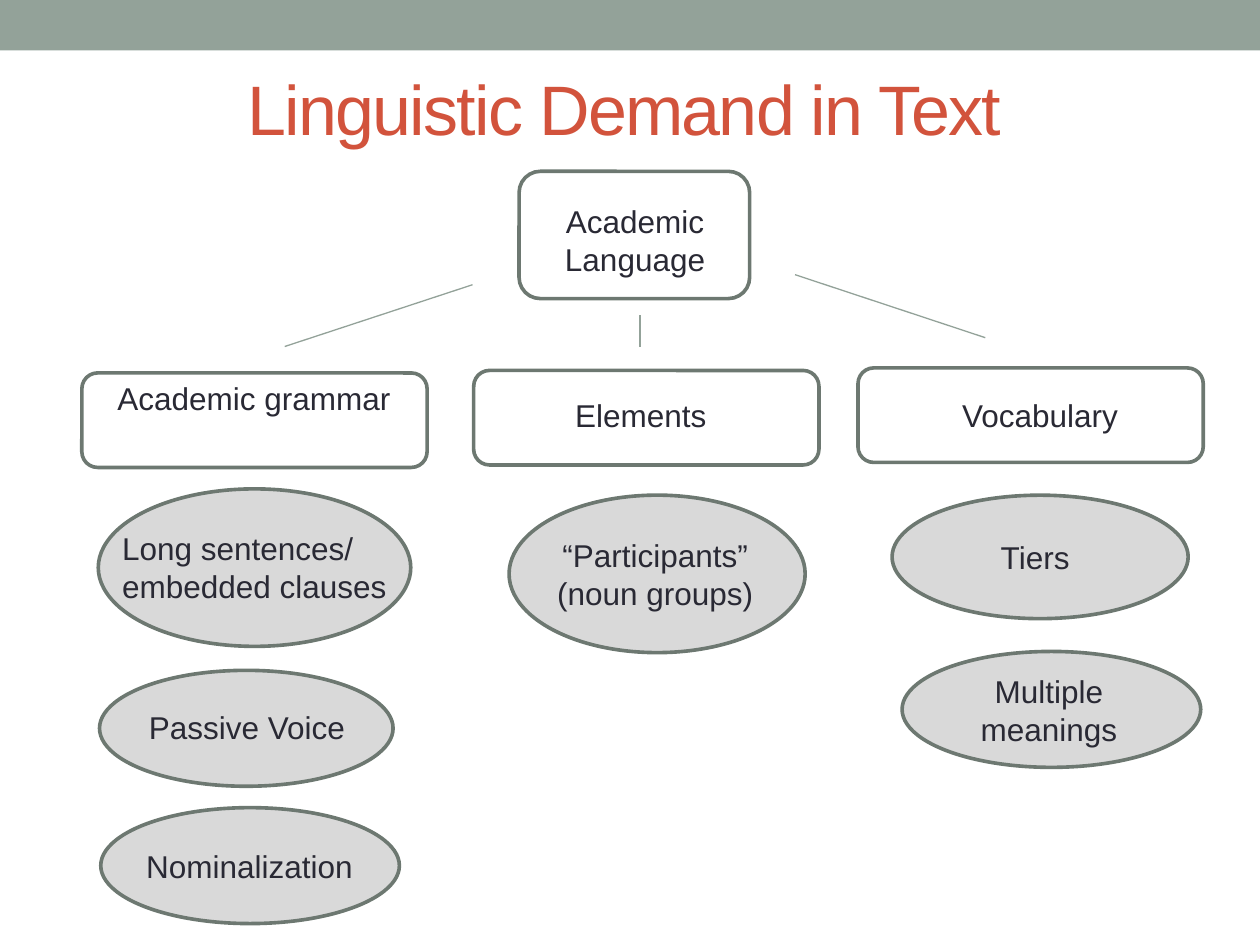
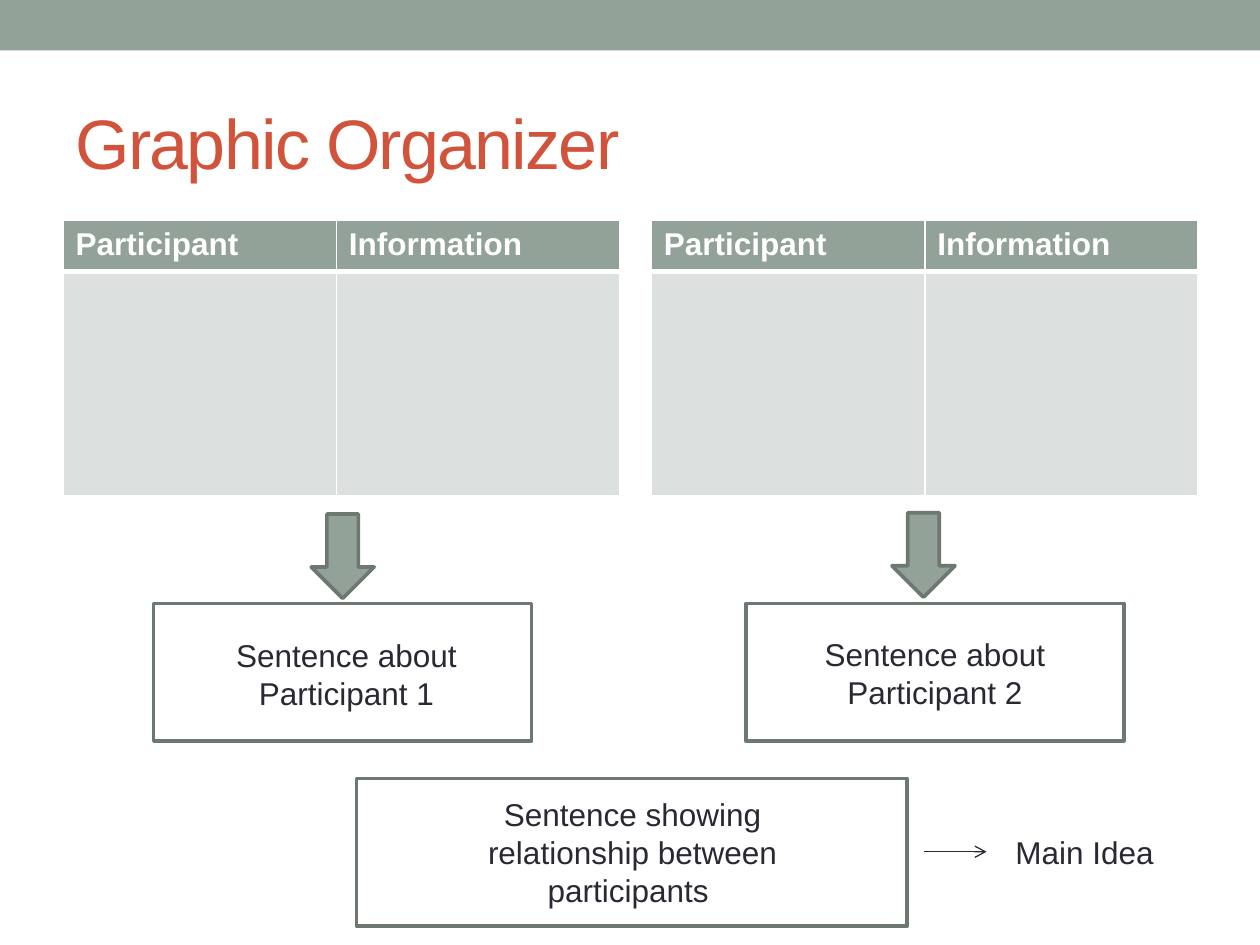
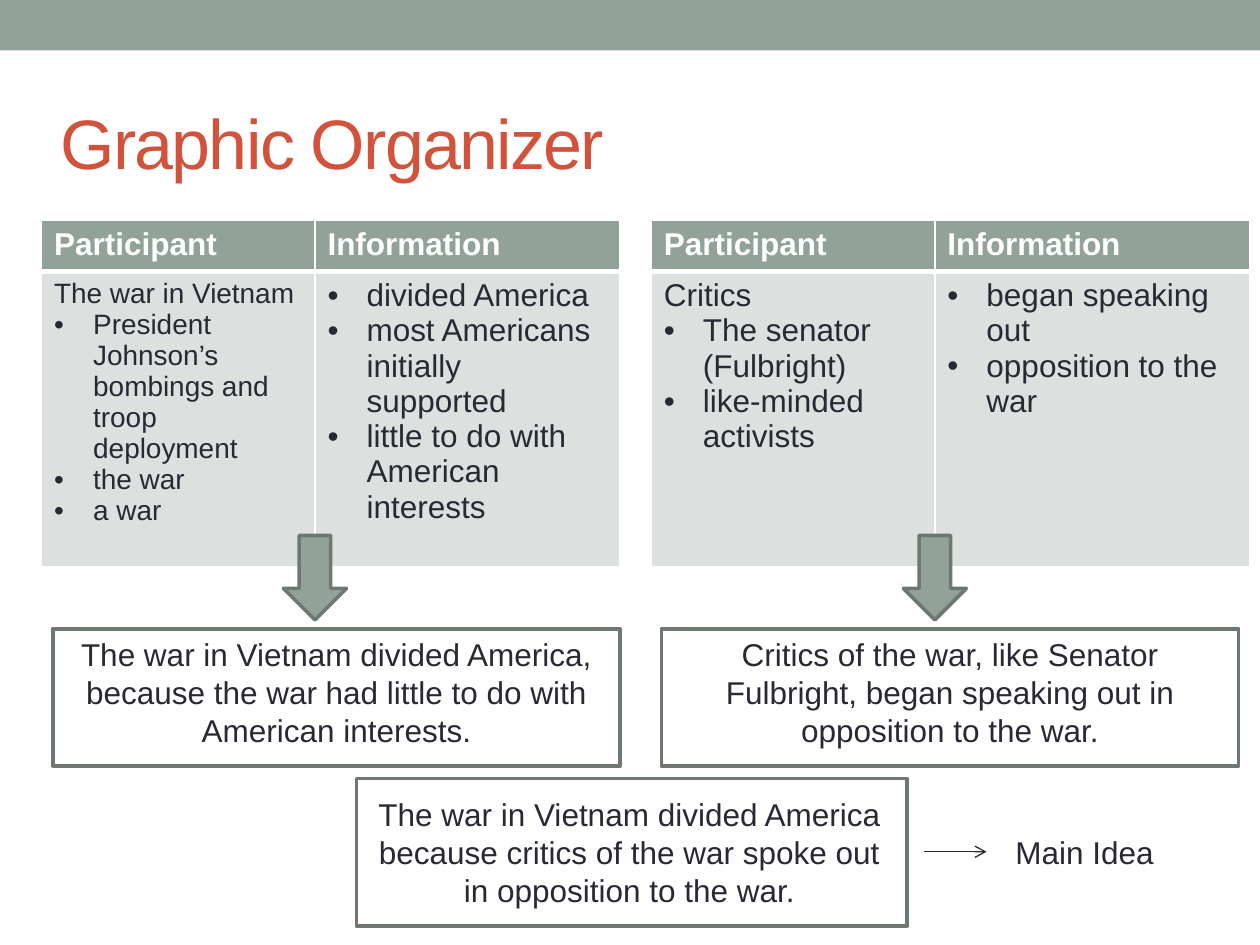
from lxml.etree import SubElement
from pptx import Presentation
from pptx.dml.color import RGBColor
from pptx.enum.shapes import MSO_CONNECTOR, MSO_SHAPE
from pptx.enum.text import MSO_ANCHOR, MSO_AUTO_SIZE, PP_ALIGN
from pptx.oxml.ns import qn
from pptx.util import Inches, Pt

rgb = RGBColor.from_string
SAGE, EDGE, INK, RUST = "93A299", "6D7871", "292934", "D2533C"
OVAL_FILL, CELL_FILL, WHITE = "D9D9D9", "DCE0DE", "FFFFFF"
BODY = {"name": "Arial", "size": Pt(18), "bold": False}
HEAD = BODY | {"bold": True}
TITLE = BODY | {"size": Pt(40)}
CENTER, LEFT = PP_ALIGN.CENTER, PP_ALIGN.LEFT

prs = Presentation()
prs.slide_width, prs.slide_height = Inches(10), Inches(7.5)
col, row = prs.slide_width / 100, prs.slide_height / 75


def box(s, kind, at, fill=None, line=EDGE):
    x, y, w, h = at
    sp = s.shapes.add_shape(kind, int(x * col), int(y * row), int(w * col), int(h * row))
    sp.shadow.inherit = False
    if fill:
        sp.fill.solid()
        sp.fill.fore_color.rgb = rgb(fill)
    else:
        sp.fill.background()
    sp.line.color.rgb = rgb(line)
    sp.line.width = Pt(2.08)
    return sp


def write(tf, lines, align=LEFT, color=INK, font=BODY, spacing=None):
    tf.word_wrap = True
    for i, line in enumerate(lines):
        p = tf.add_paragraph() if i else tf.paragraphs[0]
        p.alignment = align
        p.line_spacing = spacing
        r = p.add_run()
        r.text = line.removeprefix("• ")
        r.font.color.rgb = rgb(color)
        for key, value in font.items():
            setattr(r.font, key, value)
        if line.startswith("• "):
            pPr = p._p.get_or_add_pPr()
            pPr.set("marL", str(Inches(0.31)))
            pPr.set("indent", str(-Inches(0.31)))
            SubElement(pPr, qn("a:buFont"), typeface="Arial")
            SubElement(pPr, qn("a:buChar"), char="•")


titles = [
    ("Linguistic Demand in Text", (5.8, 4.2, 87.5, 8.7), CENTER),
    ("Graphic Organizer", (5, 5.8, 90, 10.8), LEFT),
    ("Graphic Organizer", (3.8, 5.8, 90, 10.8), LEFT),
]
slides = []
for title, (x, y, w, h), align in titles:
    s = prs.slides.add_slide(prs.slide_layouts[5])
    sp = s.shapes.title
    sp.left, sp.top, sp.width, sp.height = int(x * col), int(y * row), int(w * col), int(h * row)
    tf = sp.text_frame
    write(tf, [title], align, RUST, TITLE)
    tf.auto_size = MSO_AUTO_SIZE.NONE
    tf.vertical_anchor = MSO_ANCHOR.MIDDLE
    tf.paragraphs[0].runs[0].font._element.set("spc", "-100")
    slides.append(s)

band = box(slides[0], MSO_SHAPE.RECTANGLE, (0, 0, 100, 4), SAGE)
band.line.fill.background()
prs.slide_master.element.cSld.spTree.insert(2, band.element)

labels = []
connectors = []

s = slides[0]
ROUND, OVAL = MSO_SHAPE.ROUNDED_RECTANGLE, MSO_SHAPE.OVAL
nodes = [
    (ROUND, (41.2, 13.6, 18.3, 10.1), ["Academic Language"], (42.5, 15.5, 15.8, 7.1)),
    (ROUND, (6.5, 29.6, 27.4, 7.5), ["Academic grammar"], (8.3, 29.6, 23.7, 7.1)),
    (ROUND, (37.6, 29.4, 27.4, 7.5), ["Elements"], (40, 30.9, 21.7, 4)),
    (ROUND, (68.1, 29.2, 27.4, 7.5), ["Vocabulary"], (71.7, 30.9, 21.7, 4)),
    (OVAL, (7.8, 38.8, 24.8, 12.5), ["Long sentences/ embedded clauses"], (8.7, 41.5, 24.2, 7.1)),
    (OVAL, (7.9, 53.2, 23.3, 9.2), ["Passive Voice"], (10, 55.7, 19.2, 4)),
    (OVAL, (8, 64.1, 23.7, 9.2), ["Nominalization"], (10.2, 66.7, 19.2, 4)),
    (OVAL, (40.4, 39.3, 23.5, 12.5), ["“Participants”", "(noun groups)"], (42.4, 42, 19.2, 7.1)),
    (OVAL, (70.8, 39.3, 23.5, 9.8), ["Tiers "], (72.6, 42.2, 19.8, 4)),
    (OVAL, (71.6, 51.7, 23.7, 9.2), ["Multiple meanings"], (72.4, 52.8, 21.7, 7.1)),
]
for kind, at, lines, label_at in nodes:
    box(s, kind, at, OVAL_FILL if kind == OVAL else None)
    labels.append((s, label_at, lines, LEFT if "Long" in lines[0] else CENTER))
for ends in [(37.5, 22.6, 22.6, 27.5), (63.1, 21.8, 78.2, 26.8), (50.8, 25, 50.8, 27.5)]:
    connectors.append((s, ends, SAGE, False))

organizers = [
    {
        "left": 5, "cols": [21.7, 22.5, 2.5, 21.7, 21.7], "body": 17.8,
        "cells": [[], [], [], [], []],
        "arrows": [(24.7, 40.8), (70.8, 40.7)],
        "boxes": [(12.2, 47.9, 30, 10.9), (59.2, 47.9, 30, 10.9)],
        "sentences": [
            ((15, 50, 25, 7.1), "Sentence about Participant 1"),
            ((61.7, 49.9, 25, 7.1), "Sentence about Participant 2"),
            ((37.7, 62.6, 25, 10.1), "Sentence showing relationship between participants "),
        ],
    },
    {
        "left": 3.3, "cols": [21.7, 24.2, 2.5, 22.5, 25], "body": 23.4,
        "cells": [
            ["The war in Vietnam", "• President Johnson’s bombings and troop deployment",
             "• the war", "• a war"],
            ["• divided America", "• most Americans initially supported",
             "• little to do with American interests"],
            [],
            ["Critics", "• The senator (Fulbright)", "• like-minded activists"],
            ["• began speaking out", "• opposition to the war"],
        ],
        "arrows": [(22.5, 42.5), (71.7, 42.5)],
        "boxes": [(4.2, 49.9, 45, 10.9), (52.5, 49.9, 45.8, 10.9)],
        "sentences": [
            ((4.2, 49.9, 45, 10.1), "The war in Vietnam divided America, because the war "
                                    "had little to do with American interests."),
            ((52.5, 49.9, 45.8, 10.1), "Critics of the war, like Senator Fulbright, began "
                                       "speaking out in opposition to the war."),
            ((28.3, 62.6, 43.3, 10.1), "The war in Vietnam divided America because critics "
                                       "of the war spoke out in opposition to the war."),
        ],
    },
]
headers = [["Participant"], ["Information"], [], ["Participant"], ["Information"]]
for s, o in zip(slides[1:], organizers):
    heights = [4, o["body"]]
    tbl = s.shapes.add_table(2, 5, int(o["left"] * col), int(17.5 * row),
                             int(sum(o["cols"]) * col), int(sum(heights) * row)).table
    tbl.horz_banding = False
    for c, width in zip(tbl.columns, o["cols"]):
        c.width = int(width * col)
    for i, texts in enumerate([headers, o["cells"]]):
        tbl.rows[i].height = int(heights[i] * row)
        for j, lines in enumerate(texts):
            cell = tbl.cell(i, j)
            tcPr = cell._tc.get_or_add_tcPr()
            for side in "LRTB":
                thick = (i, side) in [(0, "B"), (1, "T")]
                ln = SubElement(tcPr, qn(f"a:ln{side}"), w=str(Pt(3 if thick else 1)))
                SubElement(SubElement(ln, qn("a:solidFill")), qn("a:srgbClr"), val=WHITE)
            if j == 2:
                cell.fill.background()
            else:
                cell.fill.solid()
                cell.fill.fore_color.rgb = rgb(CELL_FILL if i else SAGE)
            size = Pt(16 if "The war in Vietnam" in lines else 18)
            write(cell.text_frame, lines, LEFT, INK if i else WHITE,
                  (BODY if i else HEAD) | {"size": size})
    for x, y in o["arrows"]:
        box(s, MSO_SHAPE.DOWN_ARROW, (x, y, 5, 6.7), SAGE)
    for at in o["boxes"] + [(28.3, 61.8, 43.7, 11.7)]:
        box(s, MSO_SHAPE.RECTANGLE, at)
    for at, sentence in o["sentences"]:
        labels.append((s, at, [sentence], CENTER))
    labels.append((s, (79.6, 65.6, 14.2, 4), ["Main Idea"], LEFT))
    connectors.append((s, (73.3, 67.6, 78.3, 67.6), INK, True))

for s, (x, y, w, h), lines, align in labels:
    sp = s.shapes.add_textbox(int(x * col), int(y * row), int(w * col), int(h * row))
    write(sp.text_frame, lines, align, spacing=Pt(21.7))

for s, (x1, y1, x2, y2), color, arrow in connectors:
    cxn = s.shapes.add_connector(MSO_CONNECTOR.STRAIGHT, int(x1 * col), int(y1 * row),
                                 int(x2 * col), int(y2 * row))
    cxn.line.color.rgb = rgb(color)
    cxn.line.width = Pt(0.75)
    if arrow:
        SubElement(cxn.line._get_or_add_ln(), qn("a:tailEnd"), type="arrow")
    SubElement(cxn.element.spPr, qn("a:effectLst"))

prs.save("out.pptx")
